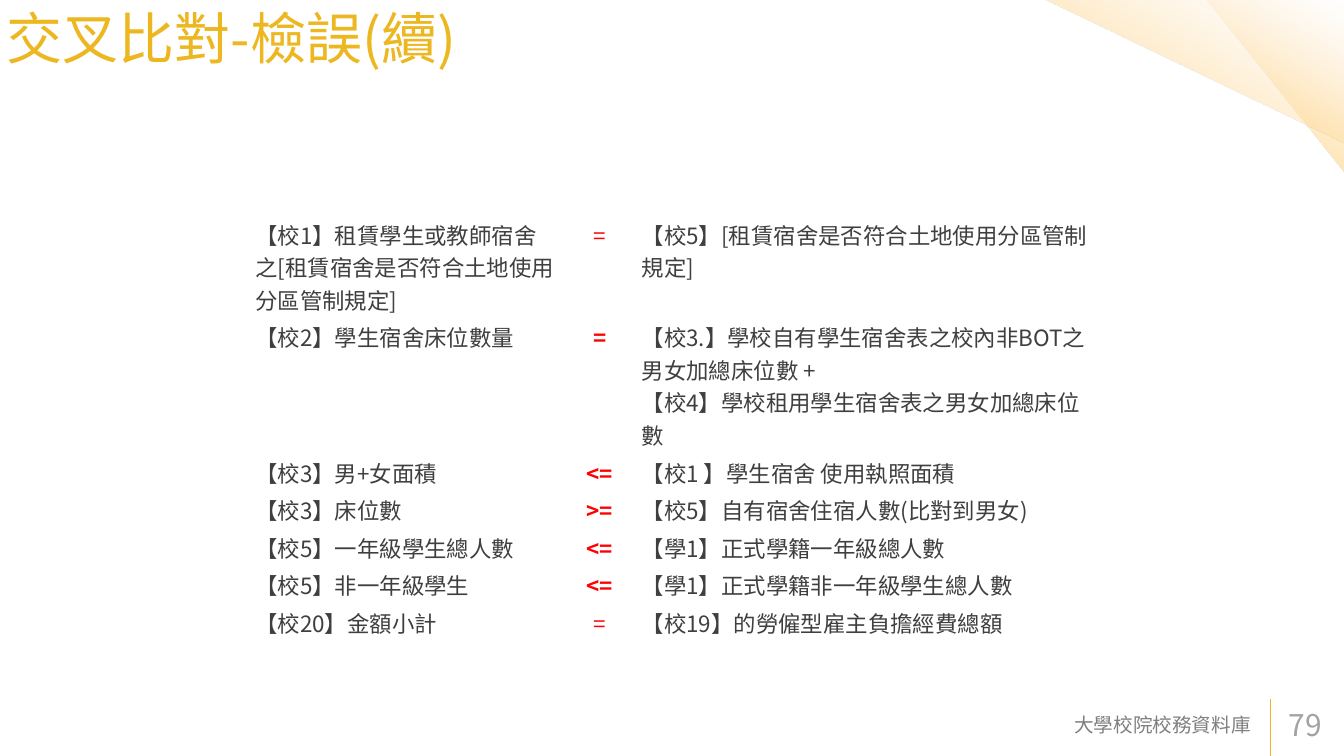
"""Build the cross-check slide with its table of validation rules."""
from dataclasses import dataclass

import lxml.etree
import pptx
import pptx.dml.color
import pptx.enum.shapes
import pptx.enum.text
import pptx.oxml
import pptx.oxml.ns
import pptx.util

Pt = pptx.util.Pt
ALIGN = pptx.enum.text.PP_ALIGN
ANCHOR = pptx.enum.text.MSO_ANCHOR


@dataclass(frozen=True)
class Theme:
    font: str = "Noto Sans CJK TC"
    gold: str = "ECB720"
    body: str = "3F3F3F"
    red: str = "FF0000"
    footer: str = "7F7F7F"
    number: str = "A2A2A2"
    gradient: tuple = ((0, "FFD984", 100), (50, "FFD995", 43), (100, "FFF0DA", 0))
    gradient_angle: int = 120
    title_size: float = 60
    body_size: float = 24
    footer_size: float = 21
    number_size: float = 32


@dataclass(frozen=True)
class Box:
    left: float
    top: float
    width: float
    height: float

    def emu(self) -> tuple:
        return Pt(self.left), Pt(self.top), Pt(self.width), Pt(self.height)


@dataclass(frozen=True)
class Rule:
    left: str
    sign: str
    right: tuple
    height: float = 40.2
    bold: bool = True


THEME = Theme()
TITLE = Box(0, 0, 803.5, 236)
FOOTER = Box(741, 755, 612, 43)
NUMBER = Box(1368, 755, 71.5, 43)
CORNERS = (Box(1293, 0, 147, 185), Box(1119, 0, 322.5, 153.5))
TABLE_LEFT, TABLE_TOP = 268.5, 231
COLUMNS = (334, 80, 489)
RULES = (
    Rule("【校1】租賃學生或教師宿舍之[租賃宿舍是否符合土地使用分區管制規定]", "=",
         ("【校5】[租賃宿舍是否符合土地使用分區管制規定]",), 110, False),
    Rule("【校2】學生宿舍床位數量", "=",
         ("【校3.】學校自有學生宿舍表之校內非BOT之男女加總床位數 +",
          "【校4】學校租用學生宿舍表之男女加總床位數"), 145),
    Rule("【校3】男+女面積", "<=", ("【校1 】學生宿舍 使用執照面積",)),
    Rule("【校3】床位數", ">=", ("【校5】自有宿舍住宿人數(比對到男女)",)),
    Rule("【校5】一年級學生總人數", "<=", ("【學1】正式學籍一年級總人數",)),
    Rule("【校5】非一年級學生", "<=", ("【學1】正式學籍非一年級學生總人數",)),
    Rule("【校20】金額小計", "=", ("【校19】的勞僱型雇主負擔經費總額",), bold=False),
)


def write(tf, *lines: str, size: float, color: str, bold: bool = False,
          align=ALIGN.LEFT) -> None:
    """Fill a text frame with one formatted paragraph per line."""
    for i, line in enumerate(lines):
        p = tf.paragraphs[0] if i == 0 else tf.add_paragraph()
        p.alignment = align
        r = p.add_run()
        r.text = line
        r.font.size = Pt(size)
        r.font.bold = bold
        r.font.color.rgb = pptx.dml.color.RGBColor.from_string(color)
        r.font.name = THEME.font
        ea = lxml.etree.SubElement(r.font._element, pptx.oxml.ns.qn("a:ea"))
        ea.set("typeface", THEME.font)


def set_margins(target, x: float, y: float) -> None:
    """Set equal side margins and equal top and bottom margins."""
    target.margin_left = target.margin_right = Pt(x)
    target.margin_top = target.margin_bottom = Pt(y)


def add_corner(s, box: Box) -> None:
    """Add a translucent gradient triangle in the top right corner."""
    sp = s.shapes.add_shape(pptx.enum.shapes.MSO_SHAPE.RIGHT_TRIANGLE, *box.emu())
    sp.rotation = 180
    sp.shadow.inherit = False
    sp.line.fill.background()
    stops = "".join(
        f'<a:gs pos="{pos * 1000}"><a:srgbClr val="{color}">'
        f'<a:alpha val="{alpha * 1000}"/></a:srgbClr></a:gs>'
        for pos, color, alpha in THEME.gradient)
    fill = pptx.oxml.parse_xml(
        f'<a:gradFill {pptx.oxml.ns.nsdecls("a")} rotWithShape="1">'
        f'<a:gsLst>{stops}</a:gsLst>'
        f'<a:lin ang="{THEME.gradient_angle * 60000}" scaled="0"/></a:gradFill>')
    sp._element.spPr.find(pptx.oxml.ns.qn("a:prstGeom")).addnext(fill)


def add_divider(s) -> None:
    """Add the upright line beside the page number."""
    line = s.shapes.add_connector(pptx.enum.shapes.MSO_CONNECTOR.STRAIGHT,
                                  Pt(1361.5), Pt(810), Pt(1361.5), Pt(749))
    line.line.color.rgb = pptx.dml.color.RGBColor.from_string(THEME.gold)
    line.line.width = Pt(1)
    lxml.etree.SubElement(line._element.spPr, pptx.oxml.ns.qn("a:effectLst"))


def add_title(s, text: str) -> None:
    """Move and fill the title placeholder."""
    sp = s.shapes.title
    sp.left, sp.top, sp.width, sp.height = TITLE.emu()
    tf = sp.text_frame
    tf.auto_size = pptx.enum.text.MSO_AUTO_SIZE.NONE
    tf.vertical_anchor = ANCHOR.TOP
    set_margins(tf, 7.2, 3.6)
    write(tf, text, size=THEME.title_size, color=THEME.gold)


def add_label(s, box: Box, text: str, **style) -> None:
    """Add a vertically centred text box."""
    tf = s.shapes.add_textbox(*box.emu()).text_frame
    tf.word_wrap = True
    tf.vertical_anchor = ANCHOR.MIDDLE
    set_margins(tf, 13, 6.5)
    write(tf, text, **style)


def add_rules(s) -> None:
    """Add the table that compares pairs of fields."""
    box = Box(TABLE_LEFT, TABLE_TOP, sum(COLUMNS), sum(rule.height for rule in RULES))
    table = s.shapes.add_table(len(RULES), len(COLUMNS), *box.emu()).table
    table.first_row = table.horz_banding = False
    for column, width in zip(table.columns, COLUMNS):
        column.width = Pt(width)
    for row, rule in zip(table.rows, RULES):
        row.height = Pt(rule.height)
        for cell in row.cells:
            cell.fill.background()
            set_margins(cell, 5, 2.7)
        left, sign, right = (cell.text_frame for cell in row.cells)
        write(left, rule.left, size=THEME.body_size, color=THEME.body)
        write(sign, rule.sign, size=THEME.body_size, color=THEME.red,
              bold=rule.bold, align=ALIGN.CENTER)
        write(right, *rule.right, size=THEME.body_size, color=THEME.body)


def main() -> None:
    """Build and save the presentation."""
    prs = pptx.Presentation()
    prs.slide_width, prs.slide_height = Pt(1440), Pt(810)
    s = prs.slides.add_slide(prs.slide_layouts[5])
    add_divider(s)
    for box in CORNERS:
        add_corner(s, box)
    add_title(s, "交叉比對-檢誤(續)")
    add_label(s, FOOTER, "大學校院校務資料庫", size=THEME.footer_size,
              color=THEME.footer, align=ALIGN.RIGHT)
    add_label(s, NUMBER, "79", size=THEME.number_size, color=THEME.number)
    add_rules(s)
    prs.save("out.pptx")


if __name__ == "__main__":
    main()
